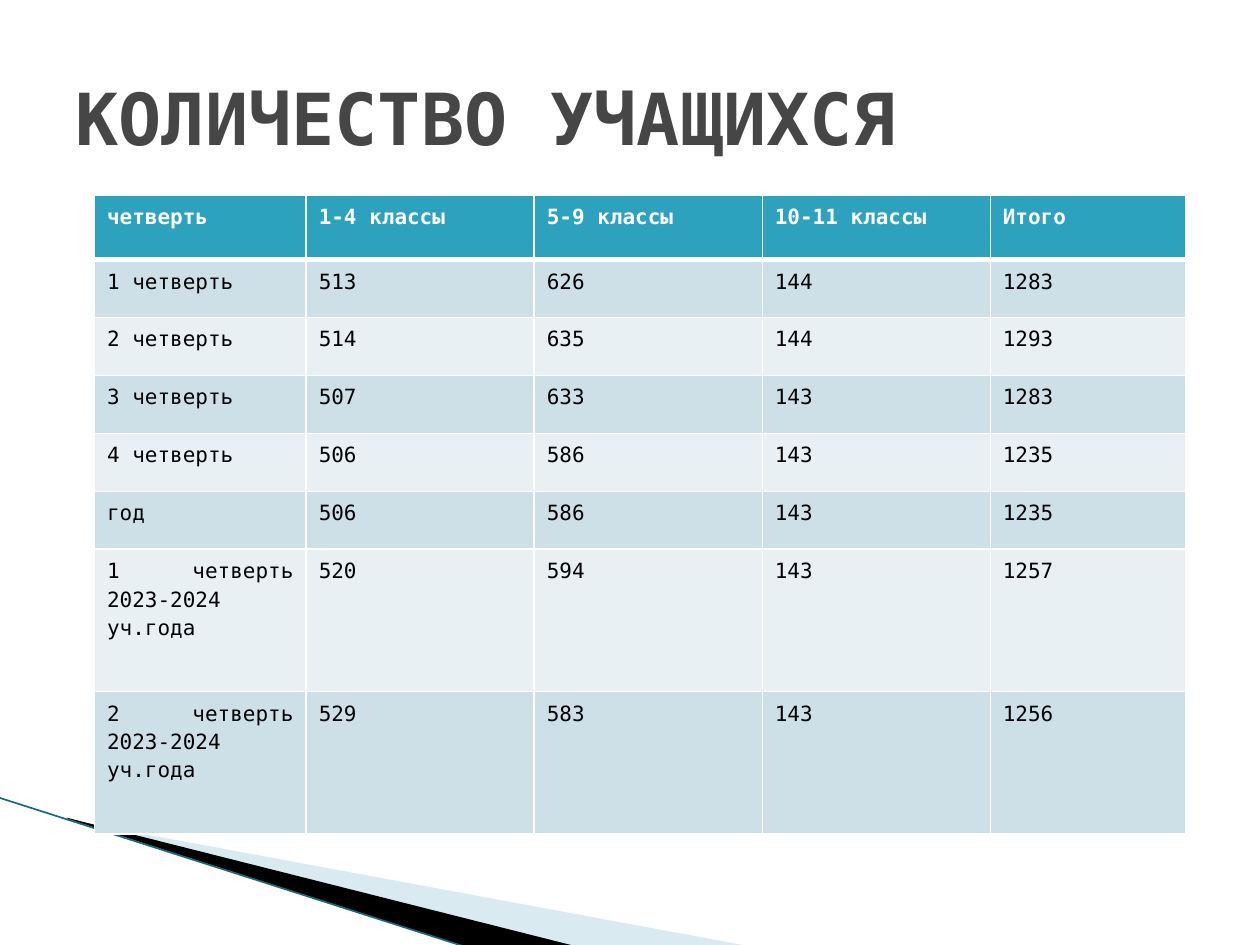
from pptx import Presentation
from pptx.dml.color import RGBColor
from pptx.enum.shapes import MSO_CONNECTOR
from pptx.enum.text import MSO_ANCHOR, PP_ALIGN
from pptx.oxml.ns import qn
from pptx.util import Inches, Pt
from lxml import etree

LEFT, JUSTIFY = PP_ALIGN.LEFT, PP_ALIGN.JUSTIFY
MIDDLE = MSO_ANCHOR.MIDDLE
STRAIGHT = MSO_CONNECTOR.STRAIGHT
FONT = "DejaVu Sans Mono"
COLORS = {
    "title": "464646", "header": "2DA2BF", "odd": "CDE0E8", "even": "E8F0F4",
    "white": "FFFFFF", "black": "000000", "wedge": "A0CBDC", "edge": "17697C",
}

TITLE = "КОЛИЧЕСТВО УЧАЩИХСЯ"
ROWS = [
    ("четверть", "1-4 классы", "5-9 классы", "10-11 классы", "Итого"),
    ("1 четверть", 513, 626, 144, 1283),
    ("2 четверть", 514, 635, 144, 1293),
    ("3 четверть", 507, 633, 143, 1283),
    ("4 четверть", 506, 586, 143, 1235),
    ("год", 506, 586, 143, 1235),
    ("1 четверть 2023-2024 уч.года", 520, 594, 143, 1257),
    ("2 четверть 2023-2024 уч.года", 529, 583, 143, 1256),
]
COL_WIDTHS = [1.68] + [1.81] * 3 + [1.55]
ROW_HEIGHTS = [0.51] + [0.46] * 5 + [1.13] * 2
# Corner wedges: points, colour, opacity in percent
WEDGES = [
    ([(0.55, 6.51), (5.95, 7.51), (4.56, 7.51), (0.55, 6.5)], "wedge", 40),
    ([(0.53, 6.49), (4.57, 7.51), (3.72, 7.52), (0.54, 6.5)], "black", 100),
]


def rgb(name):
    return RGBColor.from_string(COLORS[name])


def style(p, size, color, bold, align):
    p.alignment = align
    p.font.name, p.font.size, p.font.bold = FONT, Pt(size), bold
    p.font.color.rgb = rgb(color)


def set_borders(cell, widths):
    tc_pr = cell._tc.get_or_add_tcPr()
    for i, (side, width) in enumerate(widths.items()):
        ln = etree.Element(qn(f"a:ln{side}"), w=str(Pt(width)))
        fill = etree.SubElement(ln, qn("a:solidFill"))
        etree.SubElement(fill, qn("a:srgbClr"), val=COLORS["white"])
        tc_pr.insert(i, ln)


prs = Presentation()
prs.slide_width, prs.slide_height = Inches(10), Inches(7.5)
s = prs.slides.add_slide(prs.slide_layouts[5])

# Corner decoration
for points, color, opacity in WEDGES:
    corners = [(Inches(x), Inches(y)) for x, y in points]
    builder = s.shapes.build_freeform(*corners[0])
    builder.add_line_segments(corners[1:], close=True)
    sp = builder.convert_to_shape()
    sp.shadow.inherit = False
    sp.fill.solid()
    sp.fill.fore_color.rgb = rgb(color)
    sp.line.fill.background()
    if opacity < 100:
        clr = sp._element.spPr.find(qn("a:solidFill"))[0]
        etree.SubElement(clr, qn("a:alpha"), val=str(opacity * 1000))

edge = s.shapes.add_connector(STRAIGHT, Inches(-0.01), Inches(6.33),
                              Inches(3.71), Inches(7.52))
edge.line.color.rgb = rgb("edge")
edge.line.width = Pt(0.95)
etree.SubElement(edge._element.spPr, qn("a:effectLst"))

# Table of pupils
table = s.shapes.add_table(len(ROWS), len(COL_WIDTHS), Inches(0.75), Inches(1.55),
                           Inches(sum(COL_WIDTHS)), Inches(sum(ROW_HEIGHTS))).table
for col, width in zip(table.columns, COL_WIDTHS):
    col.width = Inches(width)
for r, (values, height) in enumerate(zip(ROWS, ROW_HEIGHTS)):
    table.rows[r].height = Inches(height)
    header = r == 0
    fill = "header" if header else "odd" if r % 2 else "even"
    borders = {"L": 1, "R": 1, "T": 3 if r == 1 else 1, "B": 3 if header else 1}
    for c, value in enumerate(values):
        cell = table.cell(r, c)
        cell.text = str(value)
        cell.fill.solid()
        cell.fill.fore_color.rgb = rgb(fill)
        set_borders(cell, borders)
        p = cell.text_frame.paragraphs[0]
        p.line_spacing = 1.15
        style(p, 12, "white" if header else "black", header, JUSTIFY)

# Title, in front of the rest
title = s.shapes.title
title.left, title.top = Inches(0.5), Inches(0.3)
title.width, title.height = Inches(9), Inches(1.25)
tf = title.text_frame
tf.text = TITLE
tf.vertical_anchor = MIDDLE
style(tf.paragraphs[0], 41, "title", True, LEFT)
s.shapes._spTree.append(title._element)

prs.save("out.pptx")
